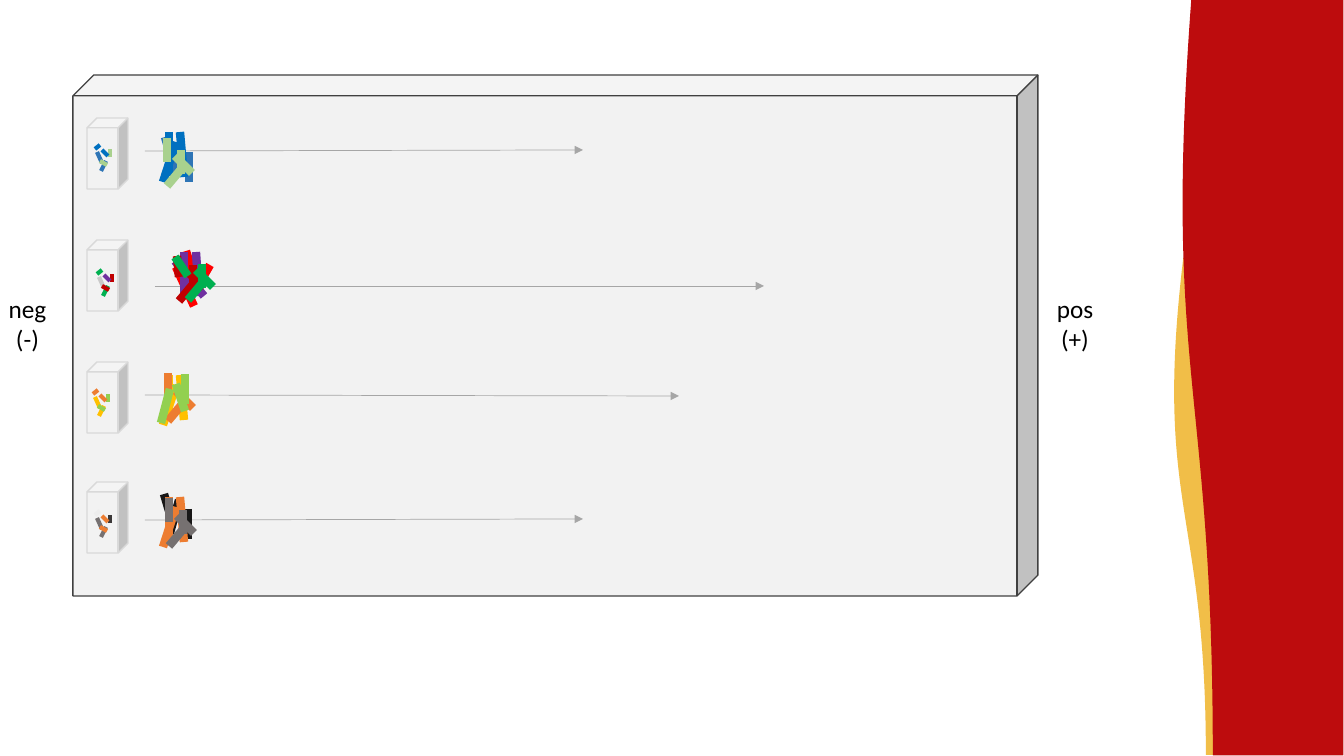
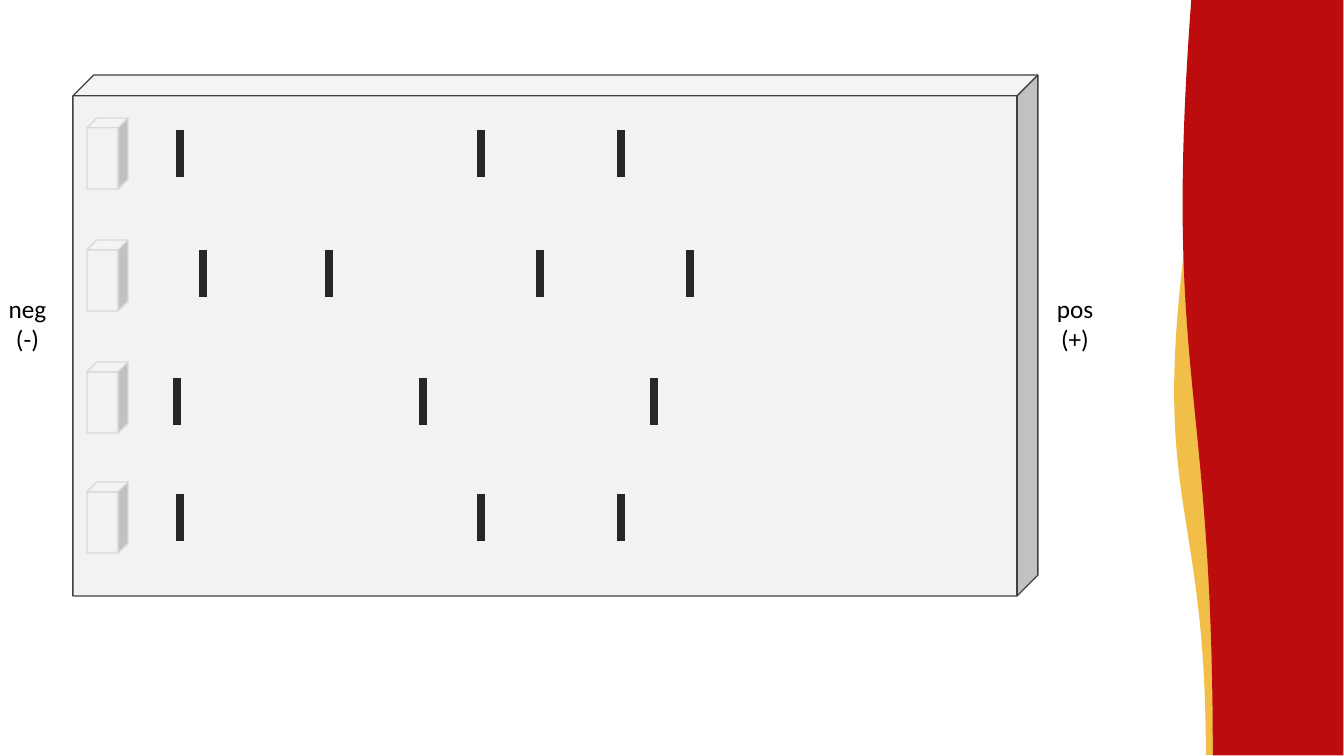
"""Builds two slides on gel electrophoresis: samples on the move, then the bands."""
from lxml import etree
from pptx import Presentation
from pptx.dml.color import RGBColor
from pptx.enum.shapes import MSO_CONNECTOR, MSO_SHAPE
from pptx.enum.text import MSO_AUTO_SIZE, PP_ALIGN
from pptx.oxml.ns import qn
from pptx.util import Emu, Pt

CUBE = MSO_SHAPE.CUBE
WAVE = MSO_SHAPE.FLOWCHART_DOCUMENT
STRAIGHT = MSO_CONNECTOR.STRAIGHT
CENTER = PP_ALIGN.CENTER
FIT = MSO_AUTO_SIZE.SHAPE_TO_FIT_TEXT

SCALE = 12192000 / 1344
FONT = "Calibri"

GOLD = RGBColor(0xF1, 0xBE, 0x48)
CRIMSON = RGBColor(0xBD, 0x0C, 0x0D)
BLACK = RGBColor(0x00, 0x00, 0x00)
GEL = RGBColor(0xF2, 0xF2, 0xF2)
EDGE = RGBColor(0x40, 0x40, 0x40)
RIM = RGBColor(0xD9, 0xD9, 0xD9)
PATH = RGBColor(0xA6, 0xA6, 0xA6)
BAND = RGBColor(0x26, 0x26, 0x26)
BLUE = RGBColor(0x00, 0x70, 0xC0)
STEEL = RGBColor(0x2E, 0x75, 0xB6)
SAGE = RGBColor(0xA9, 0xD1, 0x8E)
GREEN = RGBColor(0x00, 0xB0, 0x50)
MAROON = RGBColor(0xC0, 0x00, 0x00)
RED = RGBColor(0xFF, 0x00, 0x00)
PURPLE = RGBColor(0x70, 0x30, 0xA0)
SILVER = RGBColor(0xC9, 0xC9, 0xC9)
ORANGE = RGBColor(0xED, 0x7D, 0x31)
LIME = RGBColor(0x92, 0xD0, 0x50)
YELLOW = RGBColor(0xFF, 0xC0, 0x00)
PALE = RGBColor(0xED, 0xED, 0xED)
COAL = RGBColor(0x3B, 0x38, 0x38)
INK = RGBColor(0x18, 0x17, 0x17)
GRAY = RGBColor(0x76, 0x71, 0x71)

WELLS = [118, 240, 362, 482]
LABELS = [("neg\n(-)", -3, 61), ("pos\n(+)", 1046, 58)]

CHIPS = [(0, 0, 5, -4), (15, 8, 15, 0), (7, 14, 2, 3),
         (6, 22, 11, 12), (12, 16, 5, 12), (13, 7, 7, 1)]
SAMPLES = [
    (95, 149, [BLUE, SAGE, STEEL, STEEL, SAGE, BLUE]),
    (97, 274, [GREEN, MAROON, SILVER, GREEN, MAROON, PURPLE]),
    (93, 394, [ORANGE, LIME, YELLOW, YELLOW, LIME, ORANGE]),
    (95, 515, [PALE, COAL, GRAY, GRAY, ORANGE, ORANGE]),
]
PATHS = [(145, 151, 583, 150), (155, 286, 764, 286),
         (145, 395, 679, 396), (145, 520, 583, 519)]

CHOP = [(0, 0, 8, 27), (24, 15, 24, 45), (15, 6, 6, 39)]
TRIO = [(0, 0, 0, 44), (7, 10, -6, 50), (11, 0, 15, 45)]
CLAW = [(16, 29, 0, 48), (8, 18, 25, 35), (14, 12, 14, 36)]
FORK = [(0, 0, 0, 24)] + CLAW
FAN = [(0, 0, 8, 26), (24, 14, 8, 42), (-10, 16, 8, 55)]
CROSS = [(0, 0, 0, 44), (-9, 9, 20, 44), (12, 0, 15, 44)]
SPLAY = [(0, 0, 9, 27), (9, -10, 9, 20), (-6, 5, -15, 39)]
CLUMPS = [
    (165, 137, STEEL, CHOP),
    (169, 132, BLUE, TRIO),
    (167, 138, SAGE, FORK),
    (186, 251, RED, FAN),
    (184, 252, PURPLE, CROSS),
    (179, 253, MAROON, [(-2, 3, 0, 24)] + CLAW),
    (188, 252, GREEN, [(-13, 5, 0, 24)] + CLAW),
    (169, 375, YELLOW, TRIO),
    (168, 373, ORANGE, FORK),
    (176, 384, LIME, SPLAY),
    (164, 494, INK, CHOP),
    (169, 497, ORANGE, TRIO),
    (169, 498, GRAY, FORK),
]

ENDS = [180, 481, 621]
BANDS = [(130, ENDS), (250, [203, 329, 540, 690]),
         (378, [177, 423, 654]), (494, ENDS)]


def solid(slide, kind, box, fill, edge=None):
    shape = slide.shapes.add_shape(kind, *[Emu(round(n * SCALE)) for n in box])
    shape.shadow.inherit = False
    shape.fill.solid()
    shape.fill.fore_color.rgb = fill
    if edge is None:
        shape.line.fill.background()
    else:
        shape.line.color.rgb = edge
        shape.line.width = Pt(1)
    return shape


def stroke(shapes, ends, color, width, arrow=False):
    line = shapes.add_connector(STRAIGHT, *[Emu(round(n * SCALE)) for n in ends])
    line.line.color.rgb = color
    line.line.width = Pt(width)
    props = line.element.spPr
    if arrow:
        etree.SubElement(props.find(qn("a:ln")), qn("a:tailEnd"), type="triangle")
    etree.SubElement(props, qn("a:effectLst"))


prs = Presentation()
prs.slide_width = Emu(round(1344 * SCALE))
prs.slide_height = Emu(round(756 * SCALE))
layout = prs.slide_layouts[6]
for holder in list(layout.placeholders):
    layout.shapes.element.remove(holder.element)

first, second = [prs.slides.add_slide(layout) for _ in range(2)]

waves = [solid(first, WAVE, (1009, 421, 497, 171), GOLD),
         solid(first, WAVE, (884, 296, 756, 163), CRIMSON)]
for wave in waves:
    wave.rotation = 90
    layout.shapes.element.append(wave.element)

for slide in (first, second):
    slab = solid(slide, CUBE, (73, 75, 965, 521), GEL, EDGE)
    slab.adjustments[0] = 0.04
    for top in WELLS:
        well = solid(slide, CUBE, (87, top, 41, 71), GEL, RIM)
        well.adjustments[0] = 0.24
    for text, left, width in LABELS:
        box = [Emu(round(n * SCALE)) for n in (left, 288, width, 72)]
        frame = slide.shapes.add_textbox(*box).text_frame
        frame.word_wrap = False
        frame.auto_size = FIT
        frame.text = text
        for para in frame.paragraphs:
            para.alignment = CENTER
            font = para.runs[0].font
            font.name = FONT
            font.size = Pt(18)
            font.color.rgb = BLACK

for x, y, colors in SAMPLES:
    for (x1, y1, x2, y2), color in zip(CHIPS, colors):
        stroke(first.shapes, (x + x1, y + y1, x + x2, y + y2), color, 3)
for path in PATHS:
    stroke(first.shapes, path, PATH, 0.5, arrow=True)
for x, y, color, strands in CLUMPS:
    clump = first.shapes.add_group_shape()
    for x1, y1, x2, y2 in strands:
        stroke(clump.shapes, (x + x1, y + y1, x + x2, y + y2), color, 6)

for top, spots in BANDS:
    for x in spots:
        stroke(second.shapes, (x, top, x, top + 47), BAND, 6)

prs.save("out.pptx")
